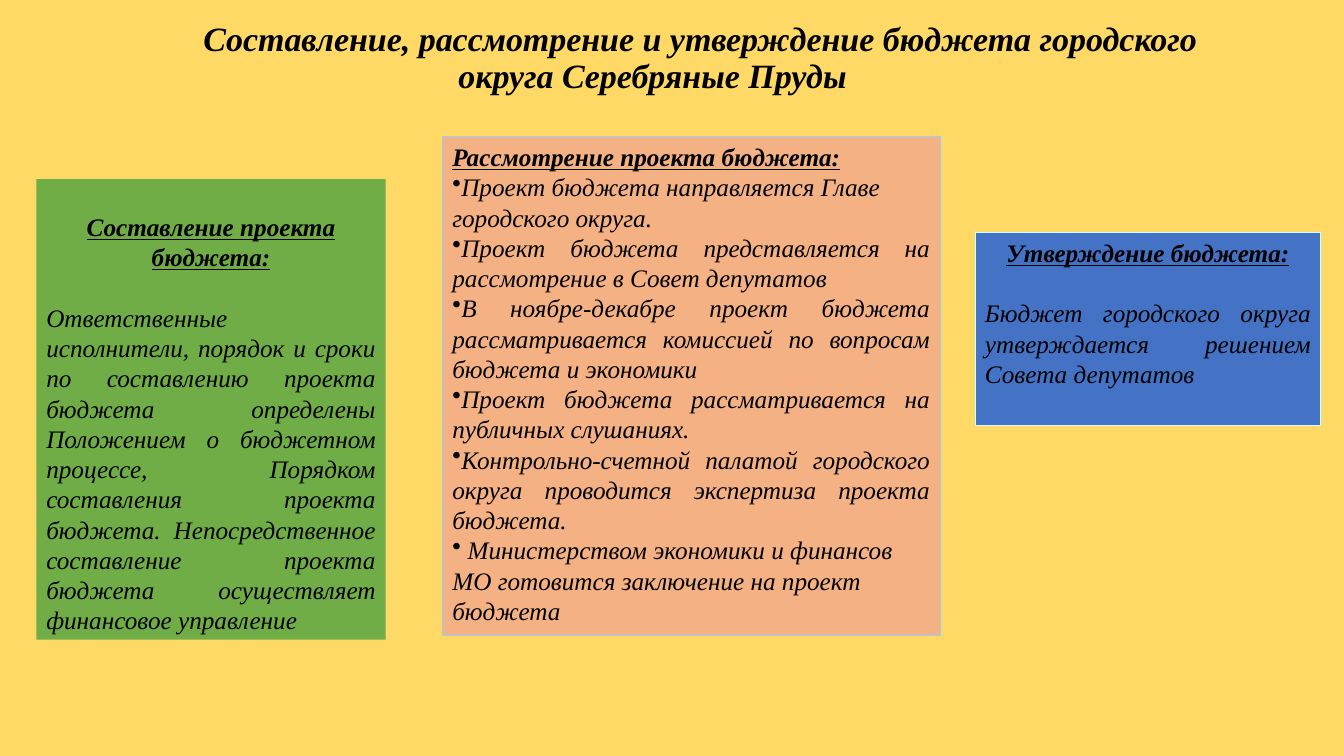
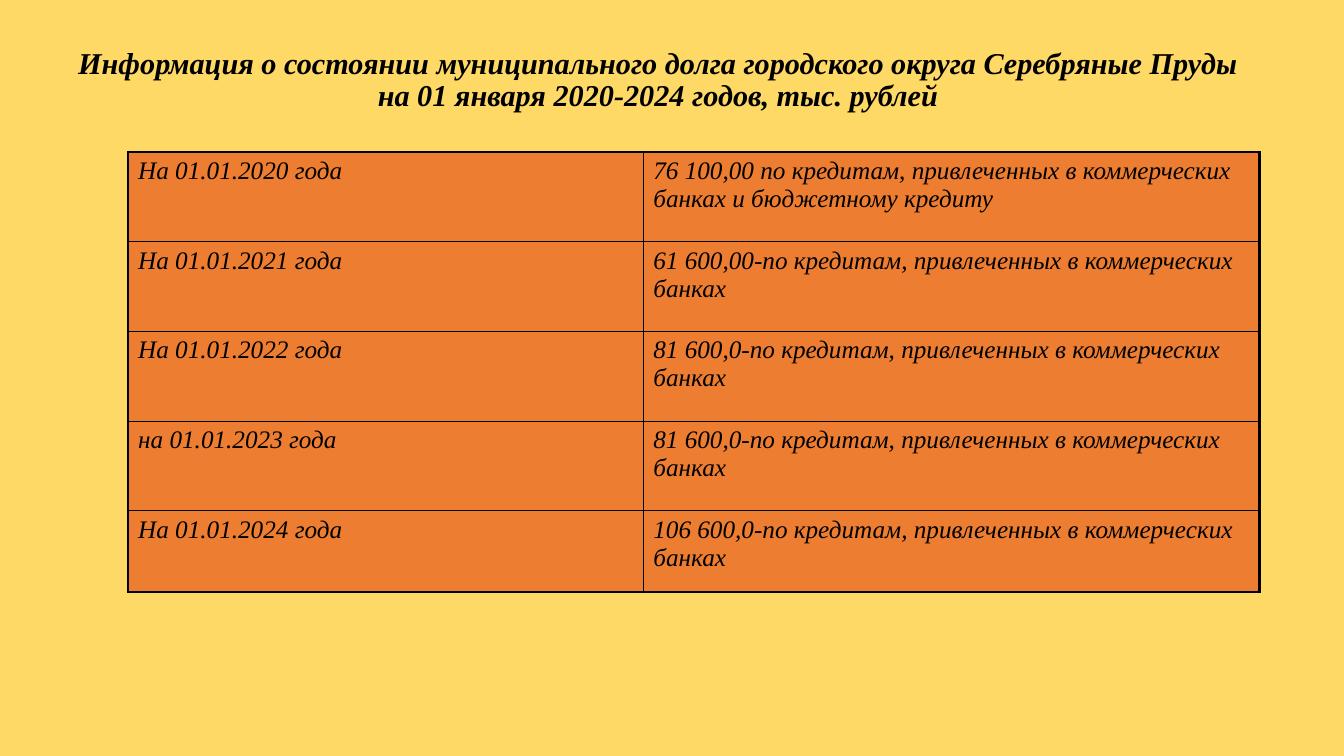
from lxml import etree
from pptx import Presentation
from pptx.dml.color import RGBColor
from pptx.enum.shapes import MSO_SHAPE
from pptx.enum.text import MSO_ANCHOR, MSO_AUTO_SIZE, PP_ALIGN
from pptx.oxml.ns import qn
from pptx.util import Pt

RECT = MSO_SHAPE.RECTANGLE
TOP, MIDDLE = MSO_ANCHOR.TOP, MSO_ANCHOR.MIDDLE
LEFT, CENTER, JUSTIFY = PP_ALIGN.LEFT, PP_ALIGN.CENTER, PP_ALIGN.JUSTIFY
NO_FIT = MSO_AUTO_SIZE.NONE

COLORS = {
    "background": "FFD966", "text": "000000", "drafting": "70AD47",
    "review": "F4B183", "review_line": "99CCFF", "approval": "4472C4",
    "approval_line": "CCFFFF", "cell": "ED7D31", "border": "000000",
}
BODY = {"name": "Times New Roman", "size": Pt(18), "bold": False, "italic": True}
HEADING = {**BODY, "bold": True, "underline": True}
TITLE = {**BODY, "bold": True}
LINE = 21.6  # height of one text line


def rgb(key):
    return RGBColor.from_string(COLORS[key])


def set_text(p, text, fmt, align=LEFT):
    p.text = text
    p.alignment = align
    for r in p.runs:
        for name, value in fmt.items():
            setattr(r.font, name, value)
        r.font.color.rgb = rgb("text")


def add_bullet(p):
    pPr = p._p.get_or_add_pPr()
    pPr.set("marL", "0")
    pPr.set("indent", "0")
    etree.SubElement(pPr, qn("a:buChar")).set("char", "•")


def add_titled_slide(prs, box, text, size, indent=0):
    s = prs.slides.add_slide(prs.slide_layouts[5])
    title = s.shapes.title
    title.left, title.top, title.width, title.height = map(Pt, box)
    tf = title.text_frame
    tf.auto_size, tf.word_wrap, tf.vertical_anchor = NO_FIT, True, MIDDLE
    p = tf.paragraphs[0]
    set_text(p, text, {**TITLE, "size": Pt(size)}, CENTER)
    p.line_spacing = 0.9
    p._p.get_or_add_pPr().set("indent", str(Pt(indent)))
    return s


def add_panel(s, box, fill, heading, items, line=None, heading_align=CENTER,
              heading_gap=LINE, anchor=TOP, top_inset=3.6, bullets=False):
    """Filled box with an underlined heading and (text, alignment) items."""
    sp = s.shapes.add_shape(RECT, *map(Pt, box))
    sp.shadow.inherit = False
    sp.fill.solid()
    sp.fill.fore_color.rgb = rgb(fill)
    if line:
        sp.line.color.rgb = rgb(line)
        sp.line.width = Pt(0.75)
    else:
        sp.line.fill.background()
    tf = sp.text_frame
    tf.word_wrap, tf.vertical_anchor, tf.margin_top = True, anchor, Pt(top_inset)
    p = tf.paragraphs[0]
    set_text(p, heading, HEADING, heading_align)
    p.space_after = Pt(heading_gap)
    for text, align in items:
        p = tf.add_paragraph()
        set_text(p, text, BODY, align)
        if bullets:
            add_bullet(p)


def set_borders(cell, widths):
    tcPr = cell._tc.get_or_add_tcPr()
    for i, (side, width) in enumerate(widths.items()):
        ln = etree.Element(qn(f"a:ln{side}"), w=str(Pt(width)))
        fill = etree.SubElement(ln, qn("a:solidFill"))
        etree.SubElement(fill, qn("a:srgbClr")).set("val", COLORS["border"])
        tcPr.insert(i, ln)


def add_debt_table(s, box, col_widths, row_heights, rows):
    """Two-column table with thick outer sides and bottom."""
    table = s.shapes.add_table(len(rows), len(col_widths), *map(Pt, box)).table
    table.first_row = table.horz_banding = False
    for col, width in zip(table.columns, col_widths):
        col.width = Pt(width)
    last_row, last_col = len(rows) - 1, len(col_widths) - 1
    for i, (row, height) in enumerate(zip(rows, row_heights)):
        table.rows[i].height = Pt(height)
        for j, text in enumerate(row):
            cell = table.cell(i, j)
            cell.fill.solid()
            cell.fill.fore_color.rgb = rgb("cell")
            p = cell.text_frame.paragraphs[0]
            set_text(p, text, BODY)
            p.space_before = Pt(10)
            set_borders(cell, {"L": 2.25 if j == 0 else 1,
                               "R": 2.25 if j == last_col else 1,
                               "T": 1,
                               "B": 2.25 if i == last_row else 1})


def build_process_slide(prs):
    s = add_titled_slide(
        prs, (39.6, 13, 853.2, 58),
        "Составление, рассмотрение и утверждение бюджета городского округа "
        "Серебряные Пруды", 24.3, indent=68)
    # Review
    add_panel(
        s, (316, 97.5, 355.5, 356.5), "review", "Рассмотрение проекта бюджета:",
        [("Проект бюджета направляется Главе городского округа.", LEFT),
         ("Проект бюджета представляется на рассмотрение в Совет депутатов", JUSTIFY),
         ("В ноябре-декабре проект бюджета рассматривается комиссией по "
          "вопросам бюджета и экономики", JUSTIFY),
         ("Проект бюджета рассматривается на публичных слушаниях.", JUSTIFY),
         ("Контрольно-счетной палатой городского округа проводится "
          "экспертиза проекта бюджета.", JUSTIFY),
         (" Министерством экономики и финансов МО готовится заключение на "
          "проект бюджета", LEFT)],
        line="review_line", heading_align=LEFT, heading_gap=0, bullets=True)
    # Approval
    add_panel(
        s, (696.5, 166, 247, 138), "approval", "Утверждение бюджета:",
        [("Бюджет городского округа\vутверждается решением Совета депутатов", JUSTIFY)],
        line="approval_line")
    # Drafting
    add_panel(
        s, (26, 128, 249.5, 329), "drafting", "Составление проекта бюджета:",
        [("Ответственные исполнители, порядок и сроки по составлению проекта "
          "бюджета определены Положением о бюджетном процессе, Порядком "
          "составления проекта бюджета. Непосредственное составление проекта "
          "бюджета осуществляет финансовое управление", JUSTIFY)],
        anchor=MIDDLE, top_inset=23)


def build_debt_slide(prs):
    s = add_titled_slide(
        prs, (41, 36.5, 858, 42.5),
        "Информация о состоянии муниципального долга городского округа "
        "Серебряные Пруды на 01 января 2020-2024 годов, тыс. рублей", 21.6)
    loans = "по кредитам, привлеченных в коммерческих банках"
    add_debt_table(
        s, (91.5, 108.5, 808, 314.4), (368, 440), [64.1] * 4 + [58],
        [("На 01.01.2020 года", f"76 100,00 {loans} и бюджетному кредиту"),
         ("На 01.01.2021 года", f"61 600,00-{loans}"),
         ("На 01.01.2022 года", f"81 600,0-{loans}"),
         ("на 01.01.2023 года", f"81 600,0-{loans}"),
         ("На 01.01.2024 года", f"106 600,0-{loans}")])


def main():
    prs = Presentation()
    prs.slide_width, prs.slide_height = Pt(960), Pt(540)
    background = prs.slide_master.background.fill
    background.solid()
    background.fore_color.rgb = rgb("background")
    build_process_slide(prs)
    build_debt_slide(prs)
    prs.save("out.pptx")


if __name__ == "__main__":
    main()
